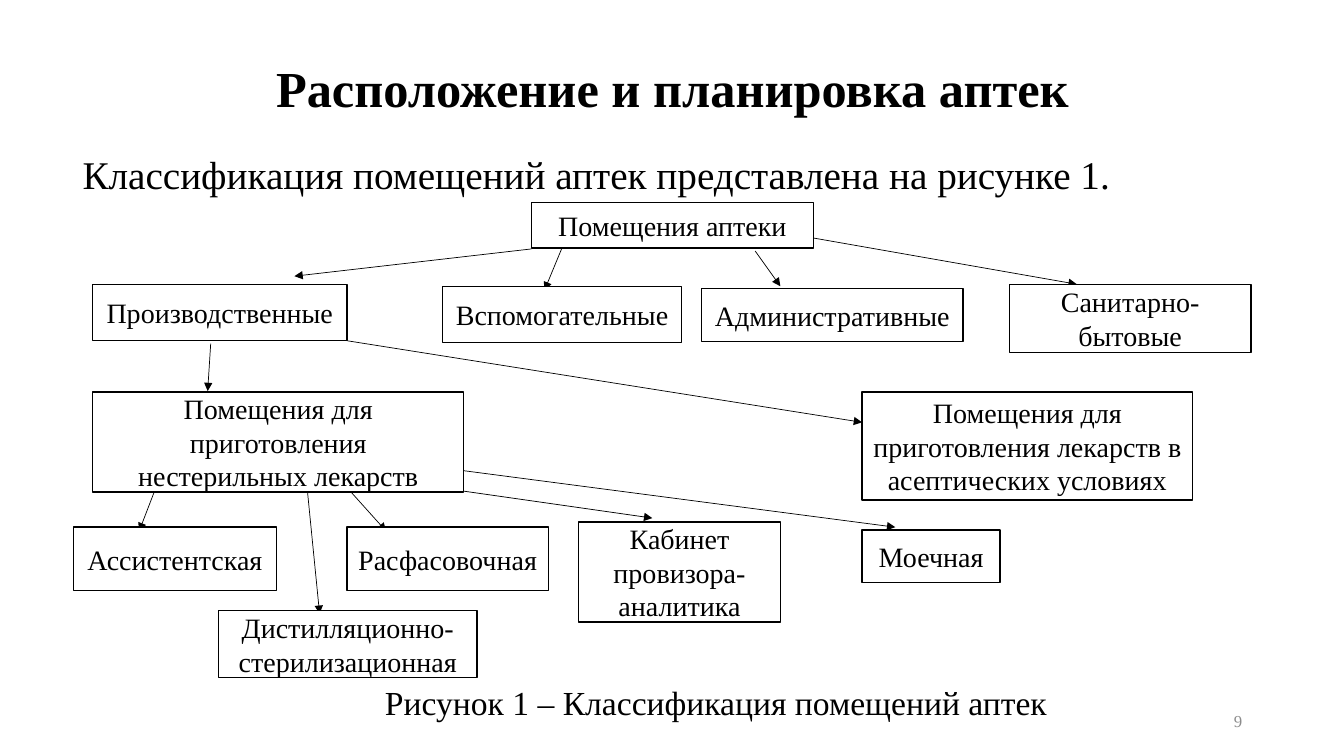
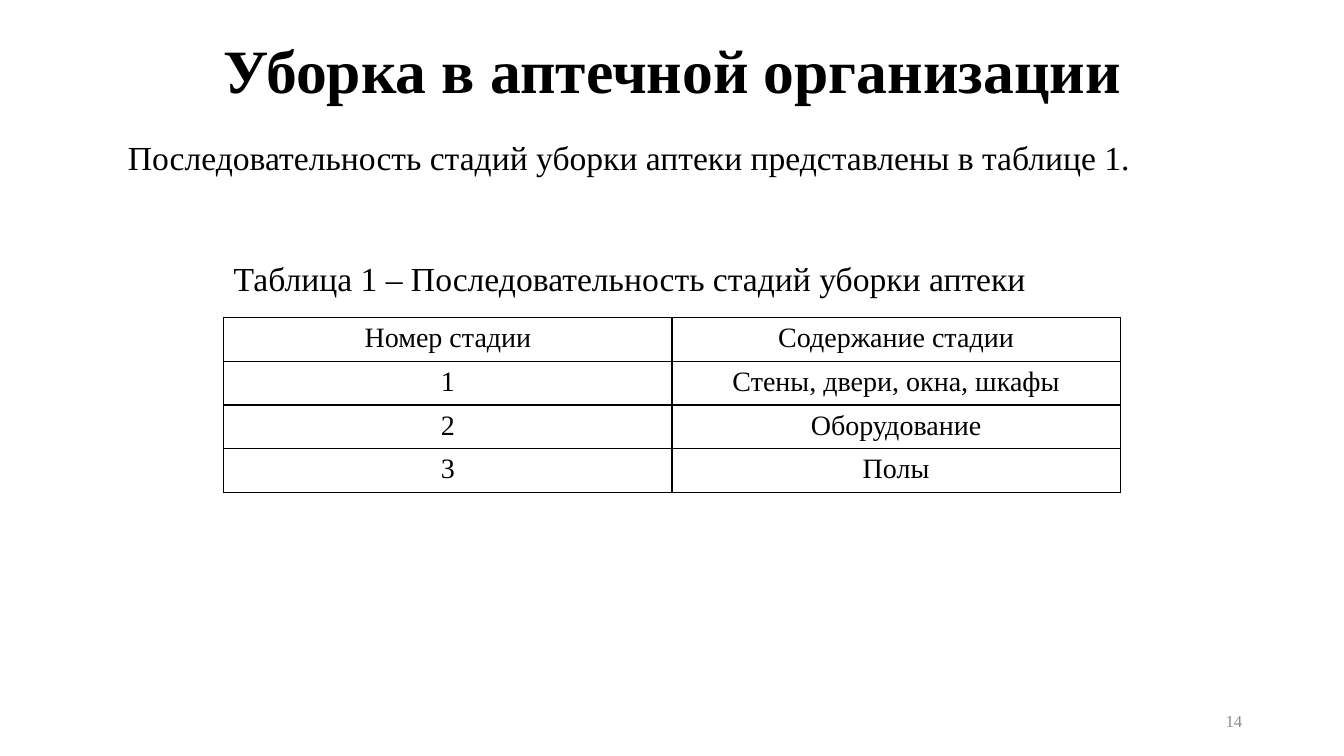
from typing import NamedTuple

import pptx
import pptx.dml.color
import pptx.enum.shapes
import pptx.enum.text
import pptx.oxml.ns
import pptx.presentation
import pptx.slide
import pptx.table
import pptx.text.text
import pptx.util
from lxml import etree

Inches = pptx.util.Inches
Pt = pptx.util.Pt
Align = pptx.enum.text.PP_ALIGN
Anchor = pptx.enum.text.MSO_ANCHOR

FONT = "Times New Roman"
COLORS = {"ink": "000000", "paper": "FFFFFF", "page": "8C8C8C"}


class Area(NamedTuple):
    left: float
    top: float
    width: float
    height: float


class Room(NamedTuple):
    text: str
    area: Area


class Arrow(NamedTuple):
    start: tuple[float, float]
    end: tuple[float, float]


ROOMS = [
    Room("Помещения аптеки", Area(5.27, 2.01, 2.8, 0.45)),
    Room("Производственные", Area(0.92, 2.82, 2.52, 0.56)),
    Room("Вспомогательные", Area(4.39, 2.84, 2.37, 0.56)),
    Room("Административные", Area(6.96, 2.86, 2.59, 0.53)),
    Room("Санитарно-бытовые", Area(10.01, 2.82, 2.4, 0.68)),
    Room("Помещения для приготовления нестерильных лекарств", Area(0.92, 3.89, 3.68, 0.99)),
    Room("Помещения для приготовления лекарств в асептических условиях", Area(8.55, 3.89, 3.28, 1.07)),
    Room("Ассистентская", Area(0.73, 5.23, 2.01, 0.63)),
    Room("Расфасовочная", Area(3.44, 5.23, 2, 0.63)),
    Room("Кабинет провизора-аналитика", Area(5.74, 5.18, 2, 0.99)),
    Room("Дистилляционно-стерилизационная", Area(2.17, 6.06, 2.56, 0.66)),
    Room("Моечная", Area(8.55, 5.26, 1.37, 0.52)),
]

ARROWS = [
    Arrow((5.27, 2.47), (2.92, 2.74)),
    Arrow((5.57, 2.47), (5.4, 2.88)),
    Arrow((7.49, 2.49), (7.74, 2.84)),
    Arrow((8.06, 2.36), (10.68, 2.82)),
    Arrow((2.09, 3.41), (2.06, 3.88)),
    Arrow((3.44, 3.38), (8.55, 4.19)),
    Arrow((1.53, 4.88), (1.38, 5.27)),
    Arrow((3.48, 4.88), (3.83, 5.27)),
    Arrow((4.58, 4.87), (6.47, 5.14)),
    Arrow((3.05, 4.88), (3.17, 6.09)),
    Arrow((4.6, 4.67), (8.88, 5.23)),
]

STAGES = [
    ("Номер стадии", "Содержание стадии"),
    ("1", "Стены, двери, окна, шкафы"),
    ("2", "Оборудование"),
    ("3", "Полы"),
]


def rgb(name: str) -> pptx.dml.color.RGBColor:
    return pptx.dml.color.RGBColor.from_string(COLORS[name])


def inches(area: Area) -> list[pptx.util.Length]:
    return [Inches(value) for value in area]


def write(
    frame: pptx.text.text.TextFrame,
    text: str,
    size: float,
    align: Align = Align.LEFT,
    color: str = "ink",
    bold: bool = False,
) -> pptx.text.text._Paragraph:
    frame.word_wrap = True
    paragraph = frame.paragraphs[0]
    paragraph.text = text
    paragraph.alignment = align
    paragraph.font.name = FONT
    paragraph.font.size = Pt(size)
    paragraph.font.bold = bold
    paragraph.font.color.rgb = rgb(color)
    return paragraph


def add_text(
    slide: pptx.slide.Slide,
    area: Area,
    text: str,
    size: float,
    align: Align = Align.LEFT,
    anchor: Anchor = Anchor.TOP,
    color: str = "ink",
    bold: bool = False,
) -> pptx.text.text._Paragraph:
    frame = slide.shapes.add_textbox(*inches(area)).text_frame
    frame.vertical_anchor = anchor
    return write(frame, text, size, align, color, bold)


def add_slide(
    presentation: pptx.presentation.Presentation,
    title: str,
    title_top: float,
    title_size: float,
    number: int,
) -> pptx.slide.Slide:
    slide = presentation.slides.add_slide(presentation.slide_layouts[6])
    paragraph = add_text(
        slide, Area(0.92, title_top, 11.5, 1.45), title, title_size, Align.CENTER, Anchor.MIDDLE, bold=True
    )
    paragraph.line_spacing = 0.9
    add_text(slide, Area(9.42, 6.95, 3, 0.4), str(number), 12, Align.RIGHT, Anchor.MIDDLE, "page")
    return slide


def add_arrow(slide: pptx.slide.Slide, arrow: Arrow) -> None:
    points = [Inches(value) for value in arrow.start + arrow.end]
    connector = slide.shapes.add_connector(pptx.enum.shapes.MSO_CONNECTOR.STRAIGHT, *points)
    connector.line.width = Pt(0.5)
    connector.line.color.rgb = rgb("ink")
    outline = connector.line._get_or_add_ln()
    etree.SubElement(outline, pptx.oxml.ns.qn("a:tailEnd"), type="triangle")
    etree.SubElement(connector._element.spPr, pptx.oxml.ns.qn("a:effectLst"))


def add_room(slide: pptx.slide.Slide, room: Room) -> None:
    shape = slide.shapes.add_shape(pptx.enum.shapes.MSO_SHAPE.RECTANGLE, *inches(room.area))
    shape.shadow.inherit = False
    shape.fill.solid()
    shape.fill.fore_color.rgb = rgb("paper")
    shape.line.color.rgb = rgb("ink")
    shape.line.width = Pt(1)
    shape.text_frame.vertical_anchor = Anchor.MIDDLE
    write(shape.text_frame, room.text, 20, Align.CENTER)


def add_borders(cell: pptx.table._Cell) -> None:
    properties = cell._tc.get_or_add_tcPr()
    for side in ("lnL", "lnR", "lnT", "lnB"):
        border = etree.SubElement(properties, pptx.oxml.ns.qn(f"a:{side}"), w=str(Pt(1)))
        fill = etree.SubElement(border, pptx.oxml.ns.qn("a:solidFill"))
        etree.SubElement(fill, pptx.oxml.ns.qn("a:srgbClr"), val=COLORS["ink"])


def add_stage_table(slide: pptx.slide.Slide, area: Area) -> None:
    table = slide.shapes.add_table(len(STAGES), len(STAGES[0]), *inches(area)).table
    table.first_row = False
    table.horz_banding = False
    for row, texts in enumerate(STAGES):
        for column, text in enumerate(texts):
            cell = table.cell(row, column)
            add_borders(cell)
            cell.fill.solid()
            cell.fill.fore_color.rgb = rgb("paper")
            write(cell.text_frame, text, 20, Align.CENTER)


def build_rooms_slide(presentation: pptx.presentation.Presentation) -> None:
    slide = add_slide(presentation, "Расположение и планировка аптек", 0.18, 36, 9)
    add_text(slide, Area(0.72, 1.44, 11.11, 0.57), "Классификация помещений аптек представлена на рисунке 1.", 28)
    for arrow in ARROWS:
        add_arrow(slide, arrow)
    for room in ROOMS:
        add_room(slide, room)
    add_text(slide, Area(3.72, 6.72, 7.16, 0.5), "Рисунок 1 – Классификация помещений аптек", 24)


def build_cleaning_slide(presentation: pptx.presentation.Presentation) -> None:
    slide = add_slide(presentation, "Уборка в аптечной организации", 0, 44, 14)
    add_text(
        slide,
        Area(1.17, 1.31, 11.56, 0.5),
        "Последовательность стадий уборки аптеки представлены в таблице 1.",
        24,
        Align.JUSTIFY,
    )
    add_text(slide, Area(2.22, 2.51, 8.33, 0.5), "Таблица 1 – Последовательность стадий уборки аптеки", 24)
    add_stage_table(slide, Area(2.22, 3.15, 8.89, 1.73))


def main() -> None:
    presentation = pptx.Presentation()
    presentation.slide_width = Inches(13.33)
    presentation.slide_height = Inches(7.5)
    build_rooms_slide(presentation)
    build_cleaning_slide(presentation)
    presentation.save("out.pptx")


if __name__ == "__main__":
    main()
